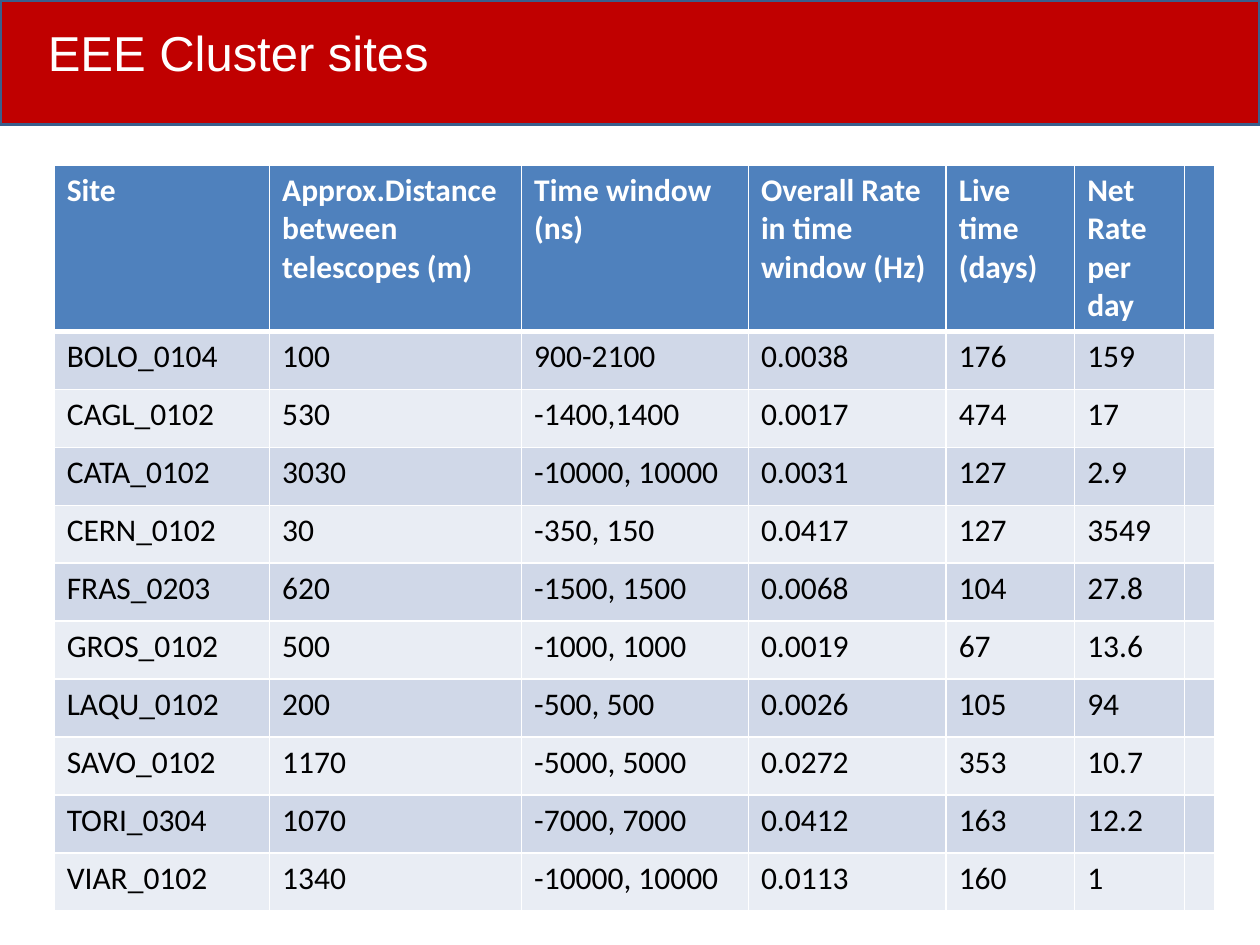
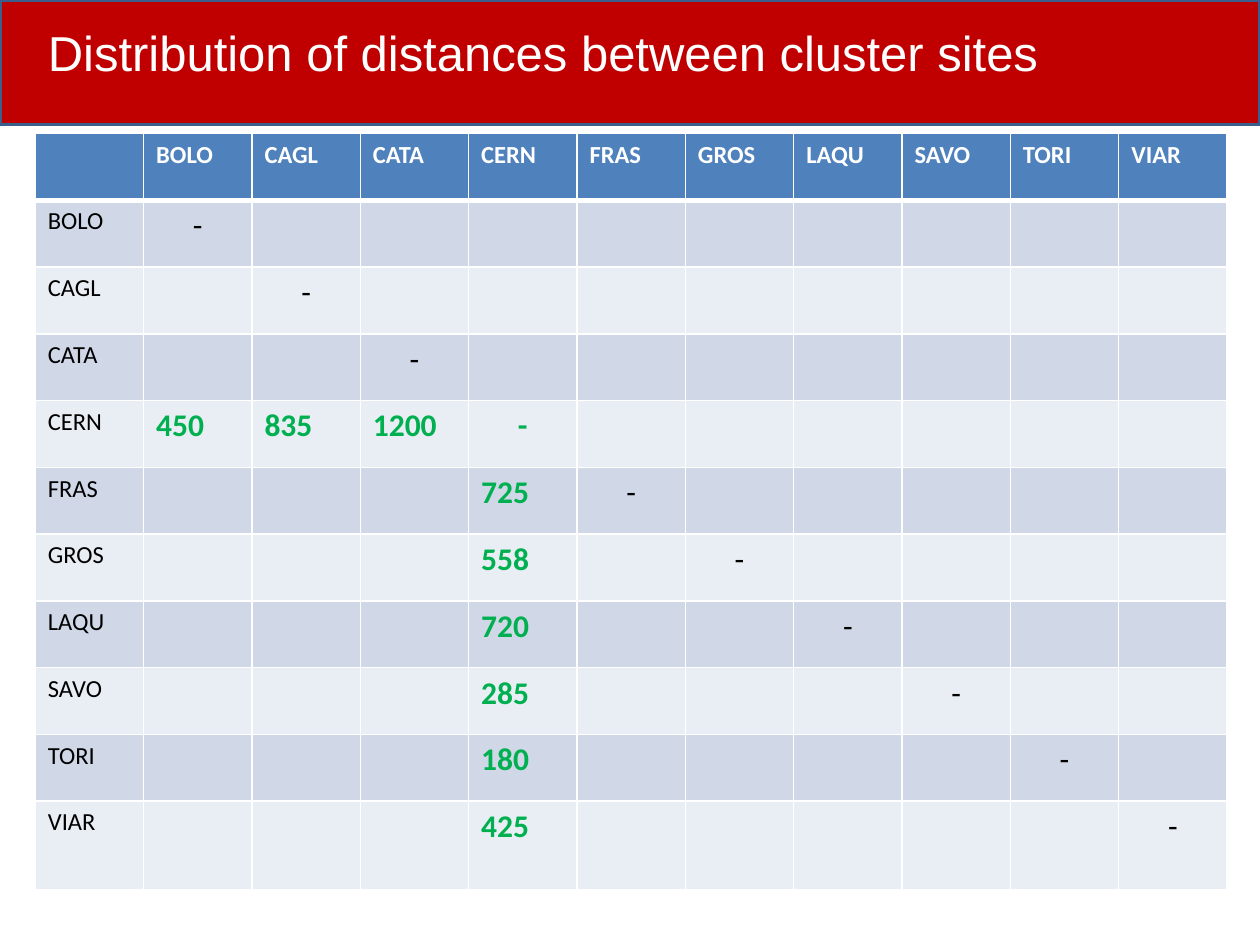
from lxml.etree import SubElement
from pptx import Presentation
from pptx.dml.color import RGBColor
from pptx.enum.shapes import MSO_SHAPE
from pptx.enum.text import MSO_ANCHOR, MSO_AUTO_SIZE, PP_ALIGN
from pptx.oxml.ns import qn
from pptx.util import Inches, Pt

COLOURS = {
    "band": "C00000", "band_edge": "3A5F8C", "white": "FFFFFF", "black": "000000",
    "header": "4F81BD", "odd_row": "D0D8E8", "even_row": "E9EDF4", "distance": "00B050",
}
TITLE_FONT = {"name": "Arial", "size": Pt(28), "bold": False}
HEADER_FONT = {"name": "Calibri", "size": Pt(18), "bold": True}
BODY_FONT = {**HEADER_FONT, "bold": False}
SMALL = {"size": Pt(14)}
TITLE_FRAME = {
    "vertical_anchor": MSO_ANCHOR.TOP, "word_wrap": True, "auto_size": MSO_AUTO_SIZE.NONE,
}

SITE_HEADINGS = [
    "Site", "Approx.Distance between telescopes (m)", "Time window (ns)",
    "Overall Rate\nin time window (Hz)", "Live time (days)", "Net Rate per day", "",
]
SITES = [
    ("BOLO_0104", "100", "900-2100", "0.0038", "176", "159", ""),
    ("CAGL_0102", "530", "-1400,1400", "0.0017", "474", "17", ""),
    ("CATA_0102", "3030", "-10000, 10000", "0.0031", "127", "2.9", ""),
    ("CERN_0102", "30", "-350, 150", "0.0417", "127", "3549", ""),
    ("FRAS_0203", "620", "-1500, 1500", "0.0068", "104", "27.8", ""),
    ("GROS_0102", "500", "-1000, 1000", "0.0019", "67", "13.6", ""),
    ("LAQU_0102", "200", "-500, 500", "0.0026", "105", "94", ""),
    ("SAVO_0102", "1170", "-5000, 5000", "0.0272", "353", "10.7", ""),
    ("TORI_0304", "1070", "-7000, 7000", "0.0412", "163", "12.2", ""),
    ("VIAR_0102", "1340", "-10000, 10000", "0.0113", "160", "1", ""),
]
HUB = "CERN"
HUB_DISTANCES = {
    "BOLO": "450", "CAGL": "835", "CATA": "1200", HUB: "-", "FRAS": "725",
    "GROS": "558", "LAQU": "720", "SAVO": "285", "TORI": "180", "VIAR": "425",
}


def rgb(colour):
    return RGBColor.from_string(COLOURS[colour])


def apply_format(target, values):
    for attribute, value in values.items():
        setattr(target, attribute, value)


def style_text(text_frame, text, font, colour, alignment=PP_ALIGN.LEFT):
    text_frame.text = text
    for paragraph in text_frame.paragraphs:
        paragraph.alignment = alignment
        apply_format(paragraph.font, font)
        paragraph.font.color.rgb = rgb(colour)


def add_titled_slide(deck, heading):
    slide = deck.slides.add_slide(deck.slide_layouts[5])
    band = slide.shapes.add_shape(MSO_SHAPE.RECTANGLE, 0, 0, deck.slide_width, Inches(0.99))
    band.shadow.inherit = False
    band.fill.solid()
    band.fill.fore_color.rgb = rgb("band")
    band.line.color.rgb = rgb("band_edge")
    band.line.width = Pt(2)
    title = slide.shapes.title
    title._element.addprevious(band._element)
    apply_format(title, {
        "left": Inches(0.28), "top": Inches(0.13),
        "width": Inches(8.9), "height": Inches(0.57),
    })
    apply_format(title.text_frame, TITLE_FRAME)
    style_text(title.text_frame, heading, TITLE_FONT, "white")
    return slide


def add_borders(cell, bottom_points):
    properties = cell._tc.get_or_add_tcPr()
    for side, points in {"L": 1, "R": 1, "T": 1, "B": bottom_points}.items():
        border = SubElement(properties, qn(f"a:ln{side}"), w=str(Pt(points)))
        fill = SubElement(border, qn("a:solidFill"))
        SubElement(fill, qn("a:srgbClr"), val=COLOURS["white"])


def add_banded_table(slide, left, top, widths, heights):
    table = slide.shapes.add_table(
        len(heights), len(widths), Inches(left), Inches(top),
        Inches(sum(widths)), Inches(sum(heights)),
    ).table
    for column, width in zip(table.columns, widths):
        column.width = Inches(width)
    for index, (row, height) in enumerate(zip(table.rows, heights)):
        row.height = Inches(height)
        band_colour = "header" if index == 0 else "odd_row" if index % 2 else "even_row"
        for cell in row.cells:
            add_borders(cell, 1 if index else 3)
            cell.fill.solid()
            cell.fill.fore_color.rgb = rgb(band_colour)
    return table


def build_sites_slide(deck):
    slide = add_titled_slide(deck, "EEE Cluster sites")
    widths = [1.71, 2, 1.8, 1.57, 1.02, 0.87, 0.24]
    table = add_banded_table(slide, 0.43, 1.31, widths, [1.29] + [0.46] * len(SITES))
    for row, values in enumerate([SITE_HEADINGS, *SITES]):
        font, colour = (BODY_FONT, "black") if row else (HEADER_FONT, "white")
        for column, value in enumerate(values):
            style_text(table.cell(row, column).text_frame, value, font, colour)


def build_distances_slide(deck):
    slide = add_titled_slide(deck, "Distribution of distances between cluster sites")
    names = list(HUB_DISTANCES)
    hub = names.index(HUB) + 1
    heights = [0.53] * len(names) + [0.7]
    table = add_banded_table(slide, 0.28, 1.06, [0.86] * (len(names) + 1), heights)
    for index, (name, distance) in enumerate(HUB_DISTANCES.items(), 1):
        style_text(table.cell(0, index).text_frame, name, HEADER_FONT | SMALL, "white")
        style_text(table.cell(index, 0).text_frame, name, BODY_FONT | SMALL, "black")
        style_text(table.cell(index, index).text_frame, "-", BODY_FONT, "black", PP_ALIGN.CENTER)
        hub_cell = table.cell(max(index, hub), min(index, hub))
        alignment = PP_ALIGN.CENTER if name == HUB else PP_ALIGN.LEFT
        style_text(hub_cell.text_frame, distance, HEADER_FONT, "distance", alignment)


def main():
    deck = Presentation()
    deck.slide_width, deck.slide_height = Inches(10), Inches(7.5)
    build_sites_slide(deck)
    build_distances_slide(deck)
    deck.save("out.pptx")


if __name__ == "__main__":
    main()
